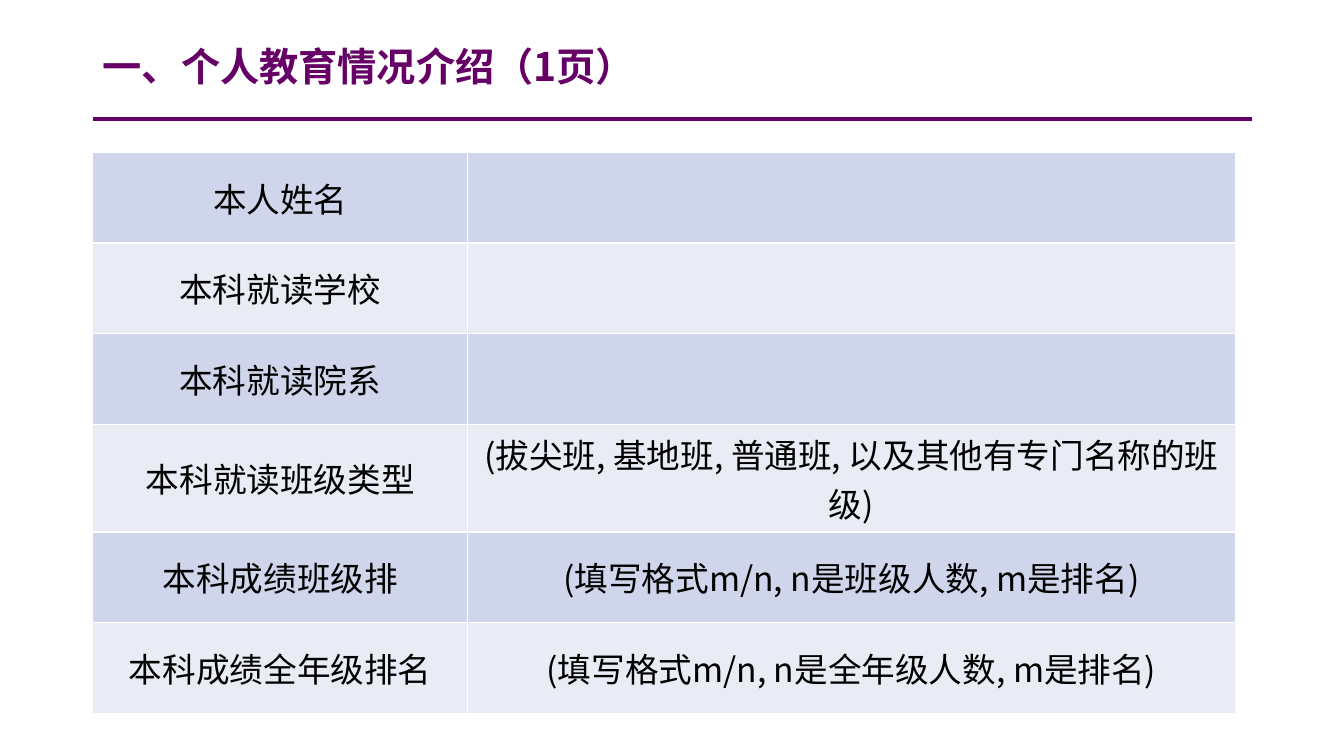
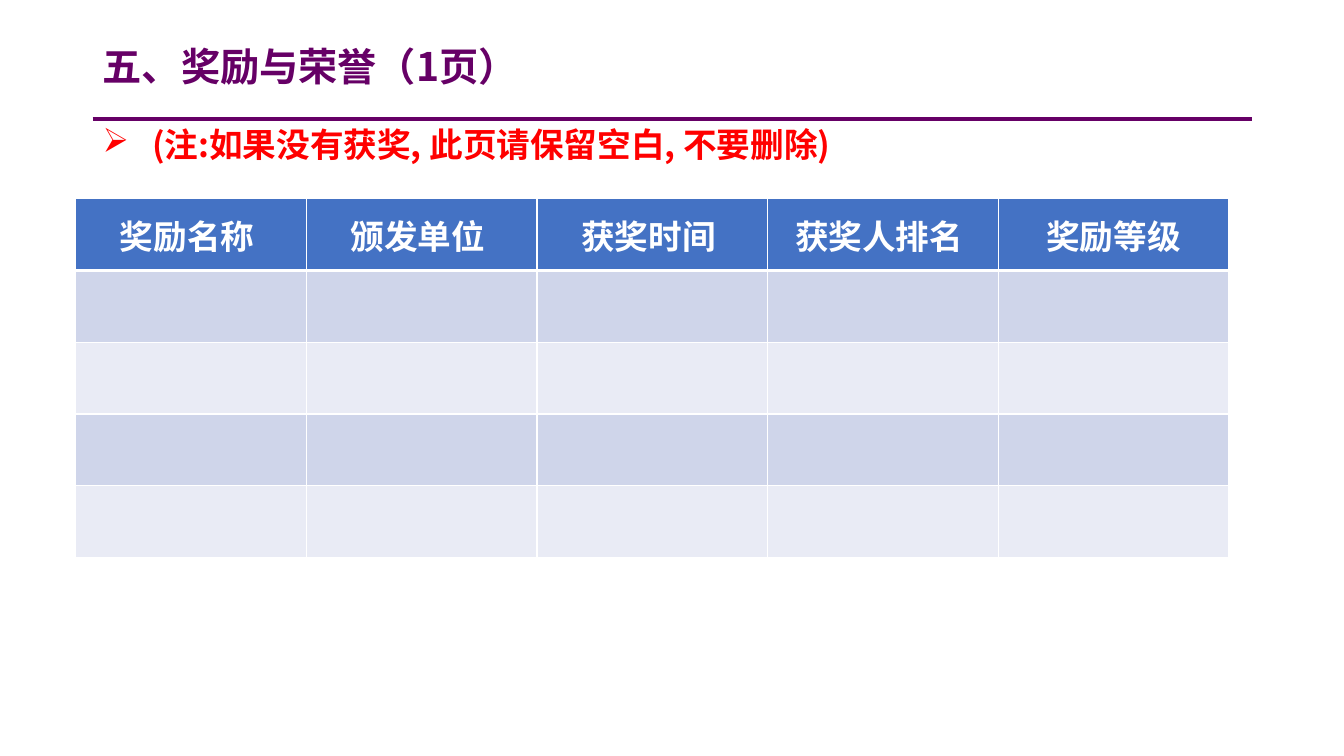
from lxml import etree
from pptx import Presentation
from pptx import util as u
from pptx.dml.color import RGBColor
from pptx.enum import shapes, text
from pptx.oxml.ns import qn

PLUM = RGBColor(0x66, 0x00, 0x66)
RED = RGBColor(0xFF, 0x00, 0x00)
BLUE = RGBColor(0x44, 0x72, 0xC4)
WHITE = RGBColor(0xFF, 0xFF, 0xFF)
BLACK = RGBColor(0x00, 0x00, 0x00)
BANDS = RGBColor(0xCF, 0xD5, 0xEA), RGBColor(0xE9, 0xEB, 0xF5)

FONT = "Noto Sans CJK SC"
LEFT, SPAN = 6.9, 86.25     # percent of the slide's width
RULE = 15.73                # percent of the slide's height


class Deck:
    """Holds the style and the current slide; lengths are percents of the slide."""

    def __init__(self):
        self.file = Presentation()
        self.file.slide_width = u.Inches(13.33)
        self.file.slide_height = u.Inches(7.5)

    def across(self, share):
        return round(self.file.slide_width * share / 100)

    def down(self, share):
        return round(self.file.slide_height * share / 100)

    def box(self, left, top, width, height):
        return (self.across(left), self.down(top),
                self.across(width), self.down(height))

    def style(self, para, size, color, bold=False):
        font = para.font
        font.size, font.bold, font.name = u.Pt(size), bold, FONT
        font.color.rgb = color
        props = para._p.pPr.find(qn("a:defRPr"))
        etree.SubElement(props, qn("a:ea"), typeface=FONT)

    def page(self, title):
        """Starts a slide with its title and the rule below it."""
        self.slide = self.file.slides.add_slide(self.file.slide_layouts[5])
        head = self.slide.shapes.title
        head.left, head.top, head.width, head.height = self.box(LEFT, 5.6, SPAN, 7.1)
        frame = head.text_frame
        frame.text = title
        frame.auto_size = text.MSO_AUTO_SIZE.NONE
        frame.vertical_anchor = text.MSO_ANCHOR.MIDDLE
        para = frame.paragraphs[0]
        para.alignment = text.PP_ALIGN.LEFT
        para.line_spacing = 0.9
        self.style(para, 28, PLUM, True)
        self.rule()

    def rule(self):
        y = self.down(RULE)
        line = self.slide.shapes.add_connector(
            shapes.MSO_CONNECTOR.STRAIGHT,
            self.across(LEFT), y, self.across(LEFT + SPAN), y)
        line.line.color.rgb = PLUM
        line.line.width = u.Pt(3)
        etree.SubElement(line._element.spPr, qn("a:effectLst"))

    def note(self, words):
        """Adds a red line with an arrow bullet under the rule."""
        frame = self.slide.shapes.add_textbox(
            *self.box(LEFT, RULE, SPAN, 6.67)).text_frame
        frame.word_wrap = True
        frame.text = words
        para = frame.paragraphs[0]
        self.style(para, 24, RED, True)
        para.space_before = u.Pt(10)
        props = para._p.pPr
        indent = u.Inches(0.49)
        props.set("marL", str(indent))
        props.set("indent", str(-indent))
        bullet = etree.Element(qn("a:buChar"), char="➢")
        props.find(qn("a:defRPr")).addprevious(bullet)

    def table(self, left, top, widths, height, rows, header=False):
        """Adds a banded table; height is that of one row."""
        grid = self.slide.shapes.add_table(
            len(rows), len(widths),
            *self.box(left, top, sum(widths), height * len(rows))).table
        grid.first_row = header
        for col, width in zip(grid.columns, widths):
            col.width = self.across(width)
        for r, row in enumerate(rows):
            grid.rows[r].height = self.down(height)
            top_row = header and r == 0
            fill = BLUE if top_row else BANDS[(r - header) % 2]
            for c, words in enumerate(row):
                cell = grid.cell(r, c)
                self.edges(cell, 3 if top_row else 1, 3 if header and r == 1 else 1)
                cell.fill.solid()
                cell.fill.fore_color.rgb = fill
                cell.vertical_anchor = text.MSO_ANCHOR.MIDDLE
                if words:
                    cell.text = words
                    para = cell.text_frame.paragraphs[0]
                    para.alignment = text.PP_ALIGN.CENTER
                    self.style(para, 24, WHITE if top_row else BLACK, top_row)

    def edges(self, cell, below, above):
        """Draws white cell borders with the given bottom and top widths."""
        props = cell._tc.get_or_add_tcPr()
        for side, width in zip("LRTB", (1, 1, above, below)):
            line = etree.SubElement(props, qn(f"a:ln{side}"), w=str(u.Pt(width)))
            fill = etree.SubElement(line, qn("a:solidFill"))
            etree.SubElement(fill, qn("a:srgbClr"), val=str(WHITE))


def main():
    deck = Deck()

    deck.page("一、个人教育情况介绍（1页）")
    deck.table(LEFT, 20.13, (27.9, 57.1), 12, [
        ("本人姓名", ""),
        ("本科就读学校", ""),
        ("本科就读院系", ""),
        ("本科就读班级类型", "(拔尖班, 基地班, 普通班, 以及其他有专门名称的班级)"),
        ("本科成绩班级排", "(填写格式m/n, n是班级人数, m是排名)"),
        ("本科成绩全年级排名", "(填写格式m/n, n是全年级人数, m是排名)"),
    ])

    deck.page("五、奖励与荣誉（1页）")
    heads = ("奖励名称 ", "颁发单位 ", "获奖时间 ", "获奖人排名 ", "奖励等级")
    blank = ("",) * len(heads)
    deck.table(5.63, 26.27, (17.16,) * len(heads), 9.5,
               [heads] + [blank] * 4, header=True)
    deck.note("(注:如果没有获奖, 此页请保留空白, 不要删除)")

    deck.file.save("out.pptx")


if __name__ == "__main__":
    main()
